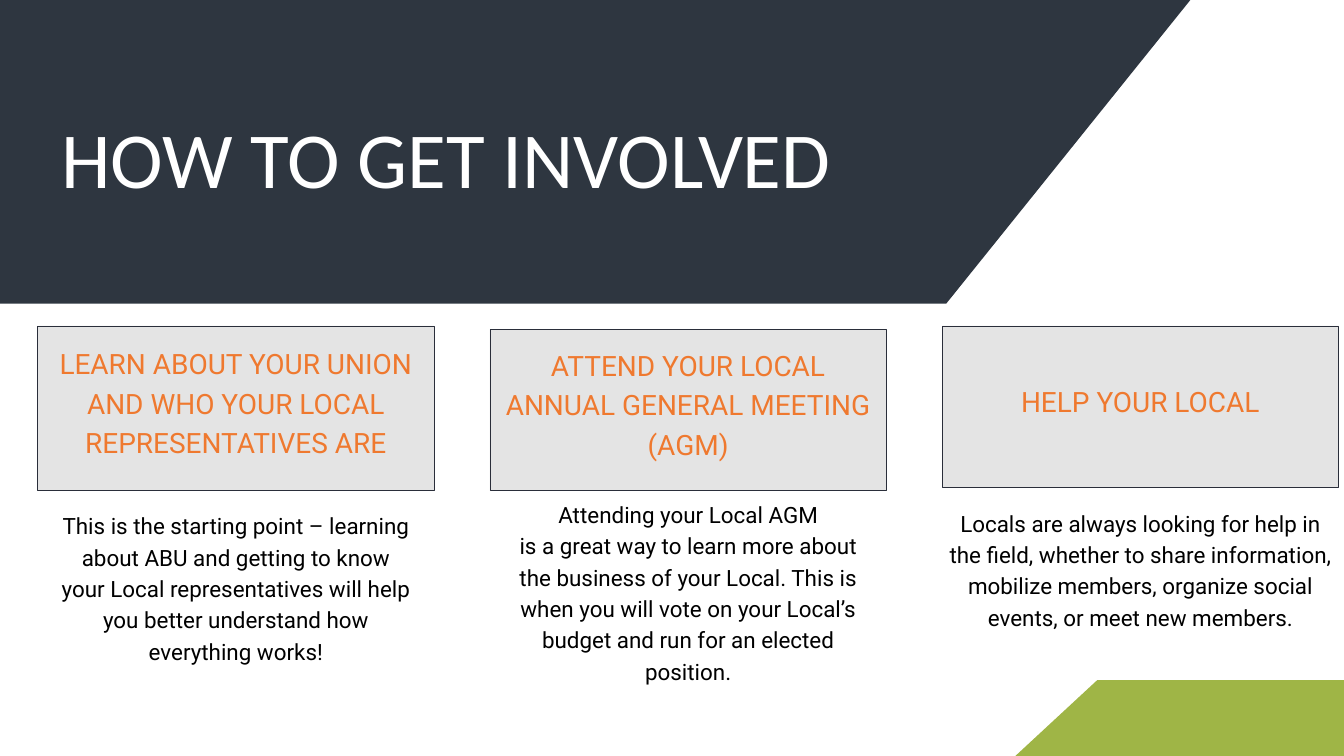
from dataclasses import dataclass

from pptx import Presentation
from pptx.dml.color import RGBColor
from pptx.enum.shapes import MSO_SHAPE
from pptx.enum.text import MSO_ANCHOR, PP_ALIGN
from pptx.util import Inches, Pt

RECT = MSO_SHAPE.RECTANGLE
TOP, MIDDLE = MSO_ANCHOR.TOP, MSO_ANCHOR.MIDDLE
LEFT, CENTER = PP_ALIGN.LEFT, PP_ALIGN.CENTER


@dataclass(frozen=True)
class Theme:
    """Colours, fonts and type sizes of the deck."""
    dark: str = "2E3640"
    green: str = "9FB546"
    orange: str = "EF792F"
    panel: str = "E4E4E4"
    border: str = "2A2E3A"
    white: str = "FFFFFF"
    black: str = "000000"
    title_font: str = "Calibri"
    body_font: str = "Roboto"
    title_size: float = 85
    heading_size: float = 30
    body_size: float = 24


class Deck:
    """Holds the theme and the current slide, and draws each kind of element."""

    def __init__(self, slide, theme):
        """Keep the slide and the theme."""
        self.s, self.theme = slide, theme

    def text(self, lines, x, y, w, h, *, size, color, font, spacing,
             align=CENTER, anchor=TOP, inset=0):
        """Add a text box with one paragraph for each line."""
        sp = self.s.shapes.add_textbox(*map(Inches, (x, y, w, h)))
        tf = sp.text_frame
        tf.word_wrap = True
        tf.vertical_anchor = anchor
        tf.margin_left = tf.margin_right = Inches(inset)
        tf.margin_top = tf.margin_bottom = Inches(inset)
        for i, line in enumerate(lines):
            p = tf.add_paragraph() if i else tf.paragraphs[0]
            p.alignment = align
            p.line_spacing = Pt(spacing)
            r = p.add_run()
            r.text = line
            r.font.size = Pt(size)
            r.font.name = font
            r.font.color.rgb = RGBColor.from_string(color)

    def fill(self, sp, color, border=None):
        """Give a shape a flat fill and an optional thin border."""
        sp.shadow.inherit = False
        sp.fill.solid()
        sp.fill.fore_color.rgb = RGBColor.from_string(color)
        if border:
            sp.line.color.rgb = RGBColor.from_string(border)
            sp.line.width = Pt(0.75)
        else:
            sp.line.fill.background()

    def polygon(self, points, color):
        """Add a closed filled outline."""
        start, *rest = [(Inches(x), Inches(y)) for x, y in points]
        fb = self.s.shapes.build_freeform(*start)
        fb.add_line_segments(rest, close=True)
        self.fill(fb.convert_to_shape(), color)

    def title(self, text, x, y, w, h):
        """Add the slide title."""
        t = self.theme
        self.text([text], x, y, w, h, size=t.title_size, color=t.white,
                  font=t.title_font, spacing=102, align=LEFT)

    def card(self, heading, x, y, h, rise=0.24, w=5.9):
        """Add a bordered panel with a centred heading."""
        t = self.theme
        sp = self.s.shapes.add_shape(RECT, *map(Inches, (x, y, w, h)))
        self.fill(sp, t.panel, t.border)
        self.text([heading], x, y - rise, w, h + rise, size=t.heading_size,
                  color=t.orange, font=t.body_font, spacing=42,
                  anchor=MIDDLE, inset=0.06)

    def body(self, lines, x, y, w, h):
        """Add the explanation below a card."""
        t = self.theme
        self.text(lines, x, y, w, h, size=t.body_size, color=t.black,
                  font=t.body_font, spacing=33.6)


COLUMNS = [
    ("LEARN ABOUT YOUR UNION AND WHO YOUR LOCAL REPRESENTATIVES ARE",
     (0.56, 4.85, 2.45),
     ["This is the starting point – learning",
      "about ABU and getting to know",
      "your Local representatives will help you better understand how",
      "everything works!"],
     (0.91, 7.56, 5.2, 2.34)),
    ("ATTEND YOUR LOCAL ANNUAL GENERAL MEETING (AGM)",
     (7.29, 4.9, 2.4),
     ["Attending your Local AGM",
      "is a great way to learn more about the business of your Local. "
      "This is when you will vote on your Local’s budget and run for an "
      "elected position."],
     (7.64, 7.39, 5.2, 2.82)),
    ("HELP YOUR LOCAL",
     (14.02, 4.85, 2.4),
     ["Locals are always looking for help in the field, whether to share "
      "information, mobilize members, organize social events, or meet new "
      "members."],
     (14.02, 7.52, 5.9, 1.85)),
]


def main():
    """Build the slide and save it."""
    prs = Presentation()
    prs.slide_width, prs.slide_height = Inches(20), Inches(11.25)
    theme = Theme()
    deck = Deck(prs.slides.add_slide(prs.slide_layouts[6]), theme)
    deck.polygon([(-5.02, -1.45), (18.88, -1.45), (14.08, 4.52),
                  (-0.23, 4.52)], theme.dark)
    deck.title("HOW TO GET INVOLVED", 0.91, 1.63, 14.76, 1.41)
    deck.polygon([(16.33, 10.12), (20.19, 10.12), (21.41, 11.25),
                  (15.11, 11.25)], theme.green)
    for heading, card_box, lines, body_box in COLUMNS:
        deck.card(heading, *card_box)
        deck.body(lines, *body_box)
    prs.save("out.pptx")


if __name__ == "__main__":
    main()
